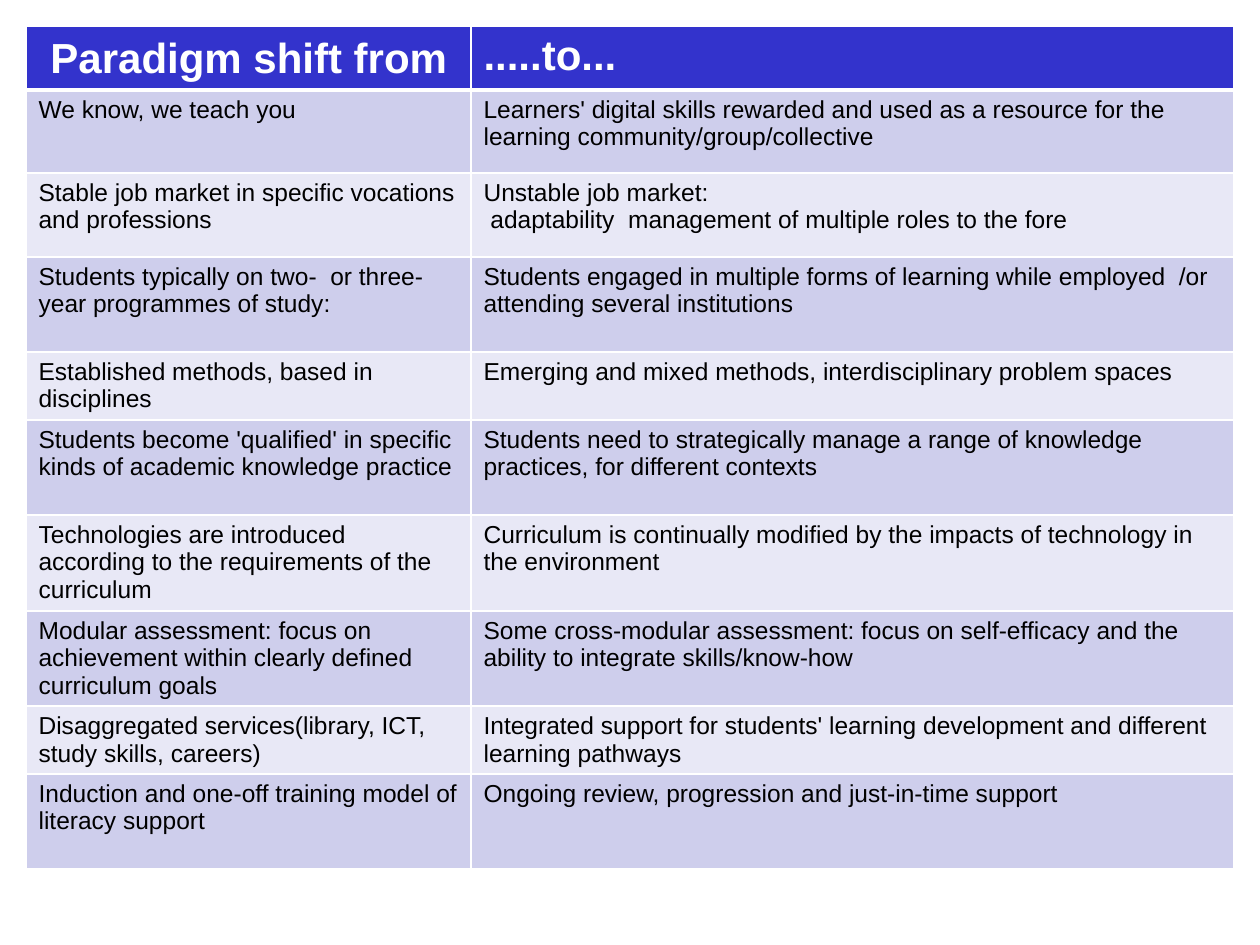
import lxml.etree
import pptx
import pptx.dml.color
import pptx.oxml.ns
import pptx.util

PX = 914400 / 126
WHITE = pptx.dml.color.RGBColor(0xFF, 0xFF, 0xFF)
BLACK = pptx.dml.color.RGBColor(0x00, 0x00, 0x00)
HEADER_BLUE = pptx.dml.color.RGBColor(0x33, 0x33, 0xCC)
BAND_DARK = pptx.dml.color.RGBColor(0xCE, 0xCE, 0xEC)
BAND_LIGHT = pptx.dml.color.RGBColor(0xE8, 0xE8, 0xF6)

TABLE_BOX = (26, 26, 1208, 841)
FROM_WIDTH = 445
ROW_HEIGHTS = (63, 83, 84, 95, 68, 95, 96, 95, 67, 95)
HEADER = (
    [[(" ", "Montserrat"), ("Paradigm shift from", "Arial")]],
    [[(".....to...", "Arial")]],
)
SHIFTS = (
    ("We know, we teach you",
     "Learners' digital skills rewarded and used as a resource for the "
     "learning community/group/collective"),
    ("Stable job market in specific vocations and professions",
     "Unstable job market:\n adaptability  management of multiple roles to the fore"),
    ("Students typically on two-  or three-year programmes of study:",
     "Students engaged in multiple forms of learning while employed  /or "
     "attending several institutions"),
    ("Established methods, based in disciplines",
     "Emerging and mixed methods, interdisciplinary problem spaces"),
    ("Students become 'qualified' in specific kinds of academic knowledge practice",
     "Students need to strategically manage a range of knowledge practices, "
     "for different contexts"),
    ("Technologies are introduced according to the requirements of the curriculum",
     "Curriculum is continually modified by the impacts of technology in the environment"),
    ("Modular assessment: focus on achievement within clearly defined curriculum goals",
     "Some cross-modular assessment: focus on self-efficacy and the ability to "
     "integrate skills/know-how"),
    ("Disaggregated services(library, ICT, study skills, careers)",
     "Integrated support for students' learning development and different "
     "learning pathways"),
    ("Induction and one-off training model of literacy support",
     "Ongoing review, progression and just-in-time support"),
)


def px(length):
    return pptx.util.Emu(round(length * PX))


def set_borders(cell, top, bottom):
    properties = cell._tc.get_or_add_tcPr()
    widths = {"a:lnL": 1, "a:lnR": 1, "a:lnT": top, "a:lnB": bottom}
    for position, (tag, width) in enumerate(widths.items()):
        line = lxml.etree.Element(pptx.oxml.ns.qn(tag), w=str(pptx.util.Pt(width)))
        fill = lxml.etree.SubElement(line, pptx.oxml.ns.qn("a:solidFill"))
        lxml.etree.SubElement(fill, pptx.oxml.ns.qn("a:srgbClr"), val=str(WHITE))
        properties.insert(position, line)


def fill_cell(cell, paragraphs, size, color, bold, background):
    cell.fill.solid()
    cell.fill.fore_color.rgb = background
    frame = cell.text_frame
    for index, spans in enumerate(paragraphs):
        para = frame.add_paragraph() if index else frame.paragraphs[0]
        for text, font_name in spans:
            span = para.add_run()
            span.text = text
            span.font.name = font_name
            span.font.size = pptx.util.Pt(size)
            span.font.bold = bold
            span.font.color.rgb = color


def add_shift_table(page, box):
    left, top, width, height = box
    table = page.shapes.add_table(
        len(ROW_HEIGHTS), 2, px(left), px(top), px(width), px(height)
    ).table
    for column, column_width in zip(table.columns, (FROM_WIDTH, width - FROM_WIDTH)):
        column.width = px(column_width)
    for row, row_height in zip(table.rows, ROW_HEIGHTS):
        row.height = px(row_height)
    for column, paragraphs in enumerate(HEADER):
        cell = table.cell(0, column)
        fill_cell(cell, paragraphs, 24, WHITE, True, HEADER_BLUE)
        set_borders(cell, 1, 3)
    for row, texts in enumerate(SHIFTS, start=1):
        background = BAND_DARK if row % 2 else BAND_LIGHT
        for column, text in enumerate(texts):
            cell = table.cell(row, column)
            paragraphs = [[(line, "Arial")] for line in text.split("\n")]
            fill_cell(cell, paragraphs, 14, BLACK, False, background)
            set_borders(cell, 3 if row == 1 else 1, 1)


def main():
    deck = pptx.Presentation()
    deck.slide_width = px(1260)
    deck.slide_height = px(945)
    page = deck.slides.add_slide(deck.slide_layouts[6])
    add_shift_table(page, TABLE_BOX)
    deck.save("out.pptx")


if __name__ == "__main__":
    main()
